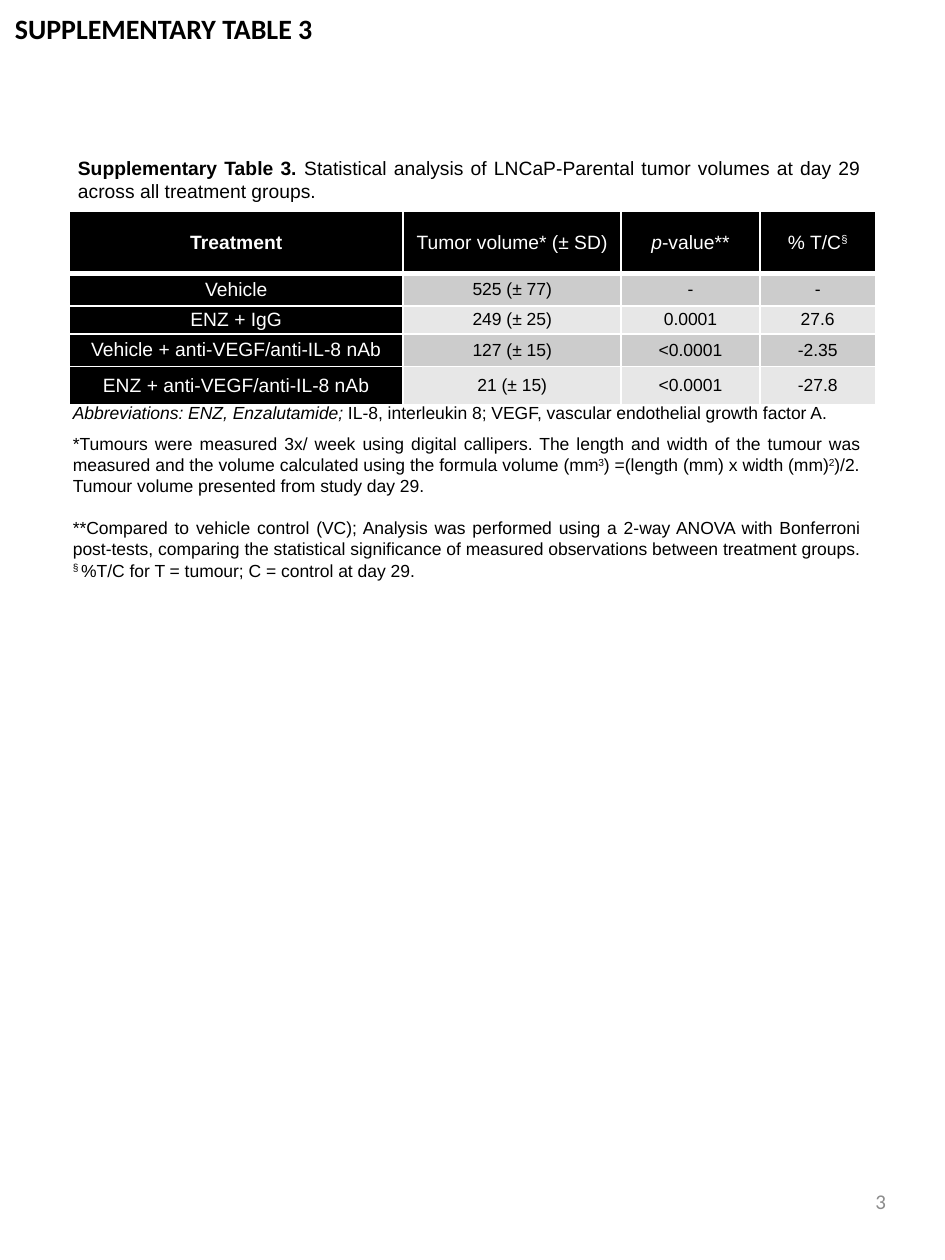
"""Build the Supplementary Table 3 page with its table, caption and notes."""
from lxml.etree import SubElement
from pptx import Presentation
from pptx.dml.color import RGBColor
from pptx.enum.text import MSO_ANCHOR as Anchor, PP_ALIGN as Align
from pptx.oxml.ns import qn
from pptx.util import Inches, Pt

BLACK = RGBColor(0x00, 0x00, 0x00)
WHITE = RGBColor(0xFF, 0xFF, 0xFF)
GRAY = RGBColor(0x8C, 0x8C, 0x8C)
BANDS = [RGBColor(0xE7, 0xE7, 0xE7), RGBColor(0xCC, 0xCC, 0xCC)]


def write(para, text, size=10, color=BLACK, font="Arial", bold=False, italic=False, raised=False):
    span = para.add_run()
    span.text = text
    span.font.size = Pt(size)
    span.font.name = font
    span.font.bold = bold
    span.font.italic = italic
    span.font.color.rgb = color
    if raised:
        span._r.get_or_add_rPr().set("baseline", "30000")


def add_box(page, left, top, width, height, paragraphs, align=Align.JUSTIFY, wrap=True, gaps=(), **style):
    box = page.shapes.add_textbox(Inches(left), Inches(top), Inches(width), Inches(height))
    frame = box.text_frame
    frame.word_wrap = wrap
    for number, spans in enumerate(paragraphs):
        para = frame.add_paragraph() if number else frame.paragraphs[0]
        para.alignment = align
        if number in gaps:
            para.space_before = Pt(12)
        for text, extra in spans:
            write(para, text, **style, **extra)
    return frame


deck = Presentation()
deck.slide_width = Inches(7.5)
deck.slide_height = Inches(10)
page = deck.slides.add_slide(deck.slide_layouts[6])

add_box(page, 0.02, 0.04, 2.59, 0.37, [[("SUPPLEMENTARY TABLE 3", {"bold": True})]],
        align=Align.LEFT, wrap=False, size=16, font="Calibri")

headings = [
    [("Treatment", {"bold": True})],
    [("Tumor volume* (± SD)", {})],
    [("p", {"italic": True}), ("-value**", {})],
    [("% T/C", {}), ("§", {"raised": True})],
]
results = [
    ["Vehicle", "525 (± 77)", "-", "-"],
    ["ENZ + IgG", "249 (± 25)", "0.0001", "27.6"],
    ["Vehicle + anti-VEGF/anti-IL-8 nAb", "127 (± 15)", "<0.0001", "-2.35"],
    ["ENZ + anti-VEGF/anti-IL-8 nAb", "21 (± 15)", "<0.0001", "-27.8"],
]
rows = [headings] + [[[(text, {})] for text in result] for result in results]
widths = [2.65, 1.73, 1.1, 0.92]
heights = [0.49, 0.26, 0.22, 0.26, 0.3]

table = page.shapes.add_table(len(rows), len(widths), Inches(0.55), Inches(1.68),
                              Inches(sum(widths)), Inches(sum(heights))).table
for column, width in zip(table.columns, widths):
    column.width = Inches(width)
for row_number, (spans_by_cell, height) in enumerate(zip(rows, heights)):
    table.rows[row_number].height = Inches(height)
    for column_number, spans in enumerate(spans_by_cell):
        cell = table.cell(row_number, column_number)
        cell.vertical_anchor = Anchor.MIDDLE
        cell.margin_left = cell.margin_right = Inches(0.07)
        cell.margin_top = cell.margin_bottom = 0
        thick_side = {0: "lnB", 1: "lnT"}.get(row_number)
        for side in ("lnL", "lnR", "lnT", "lnB"):
            line = SubElement(cell._tc.get_or_add_tcPr(), qn(f"a:{side}"))
            line.set("w", str(Pt(3 if side == thick_side else 1)))
            SubElement(SubElement(line, qn("a:solidFill")), qn("a:srgbClr")).set("val", str(WHITE))
        dark = row_number == 0 or column_number == 0
        cell.fill.solid()
        cell.fill.fore_color.rgb = BLACK if dark else BANDS[row_number % 2]
        para = cell.text_frame.paragraphs[0]
        para.alignment = Align.CENTER
        for text, extra in spans:
            write(para, text, size=11 if dark else 10, color=WHITE if dark else BLACK, **extra)

add_box(page, 0.52, 1.19, 6.41, 0.47, [[
    ("Supplementary Table 3. ", {"bold": True}),
    ("Statistical analysis of LNCaP-Parental tumor volumes at day 29 across all treatment groups. ", {}),
]], size=11)

add_box(page, 0.48, 3.14, 6.45, 0.27, [[
    ("Abbreviations: ENZ, Enzalutamide; ", {"italic": True}),
    ("IL-8, interleukin 8; VEGF, vascular endothelial growth factor A.", {}),
]])

add_box(page, 0.48, 3.39, 6.44, 1.28, [
    [
        ("*Tumours were measured 3x/ week using digital callipers. The length and width of the tumour was "
         "measured and the volume calculated using the formula volume (mm", {}),
        ("3", {"raised": True}),
        (") =(length (mm) x width (mm)", {}),
        ("2", {"raised": True}),
        (")/2. Tumour volume presented from study day 29.", {}),
    ],
    [
        ("**Compared to vehicle control (VC); Analysis was performed using a 2-way ANOVA with Bonferroni "
         "post-tests, comparing the statistical significance of measured observations between treatment "
         "groups. ", {}),
    ],
    [("§ ", {"raised": True}), ("%T/C for T = tumour; C = control at day 29.", {})],
], gaps=(1,))

page_number = add_box(page, 5.38, 9.27, 1.75, 0.53, [[("3", {})]],
                      align=Align.RIGHT, size=12, font="Calibri", color=GRAY)
page_number.vertical_anchor = Anchor.MIDDLE

deck.save("out.pptx")
